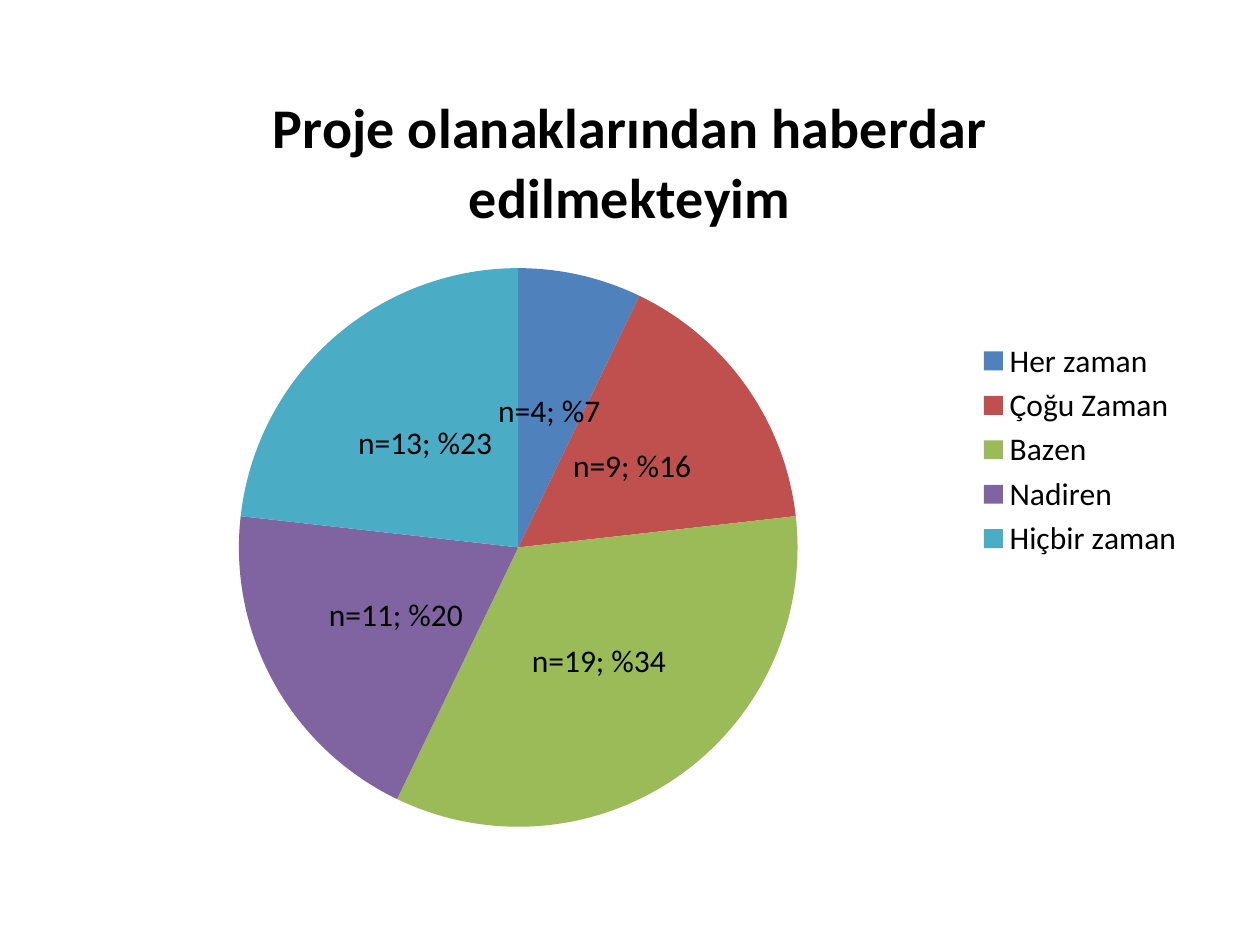
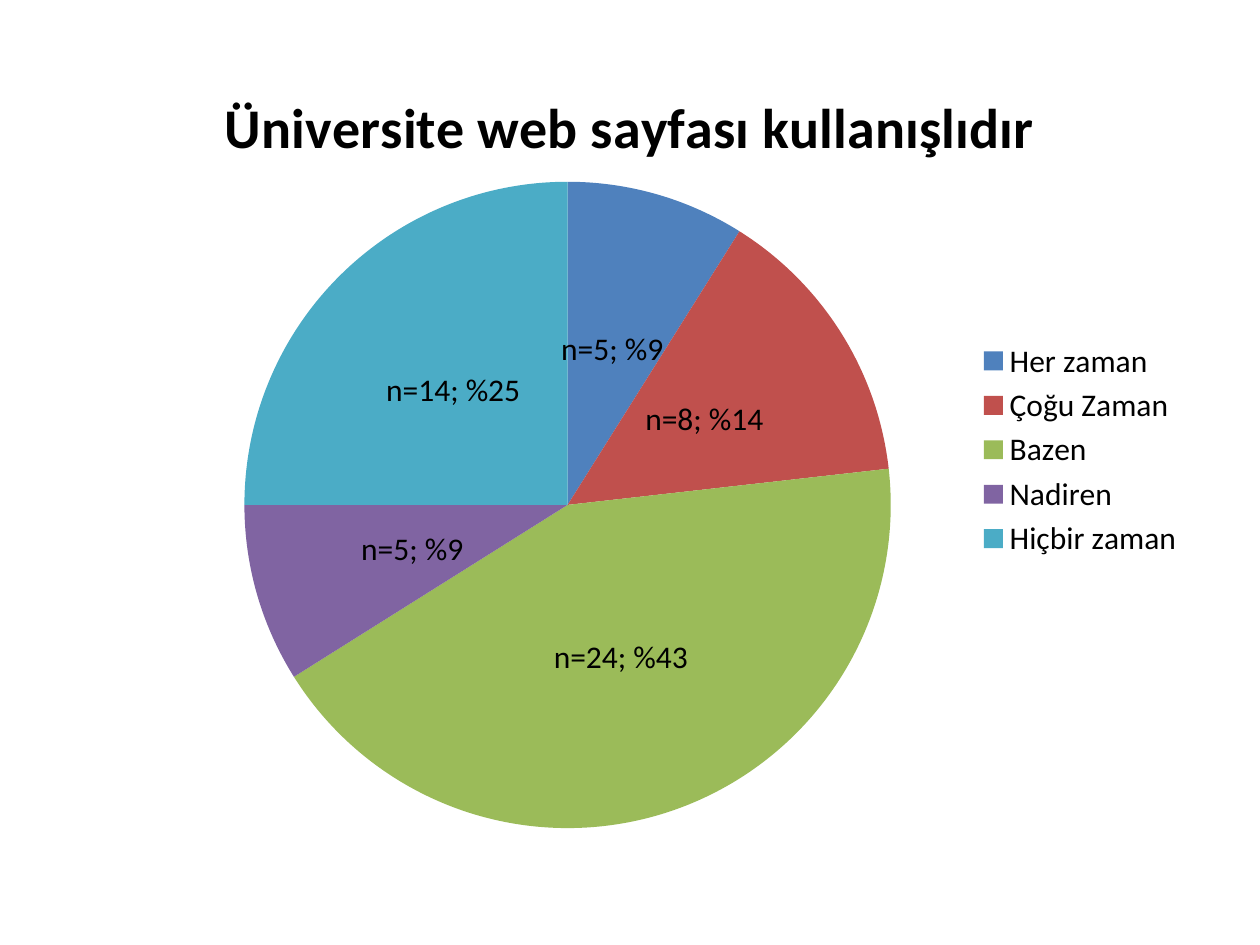
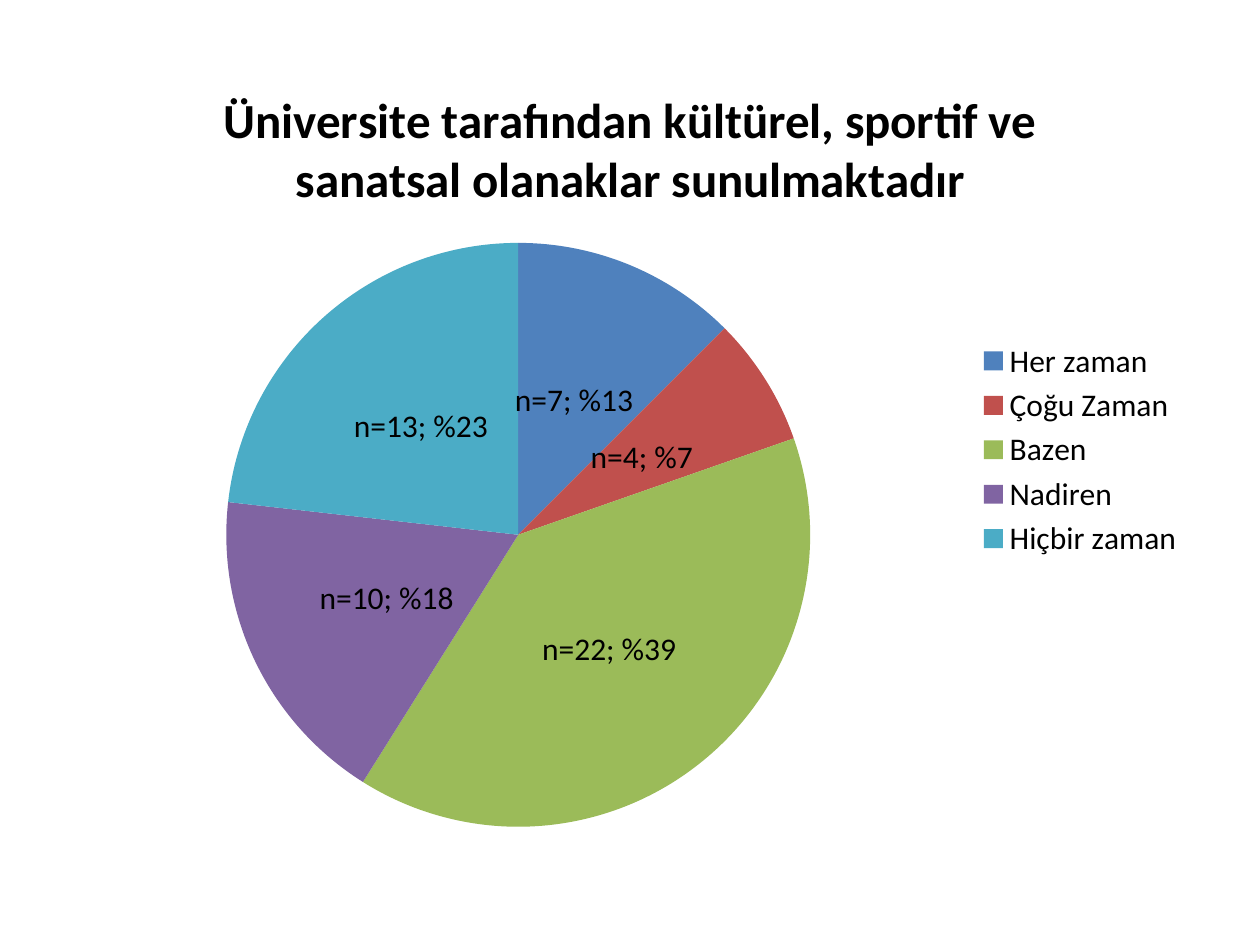
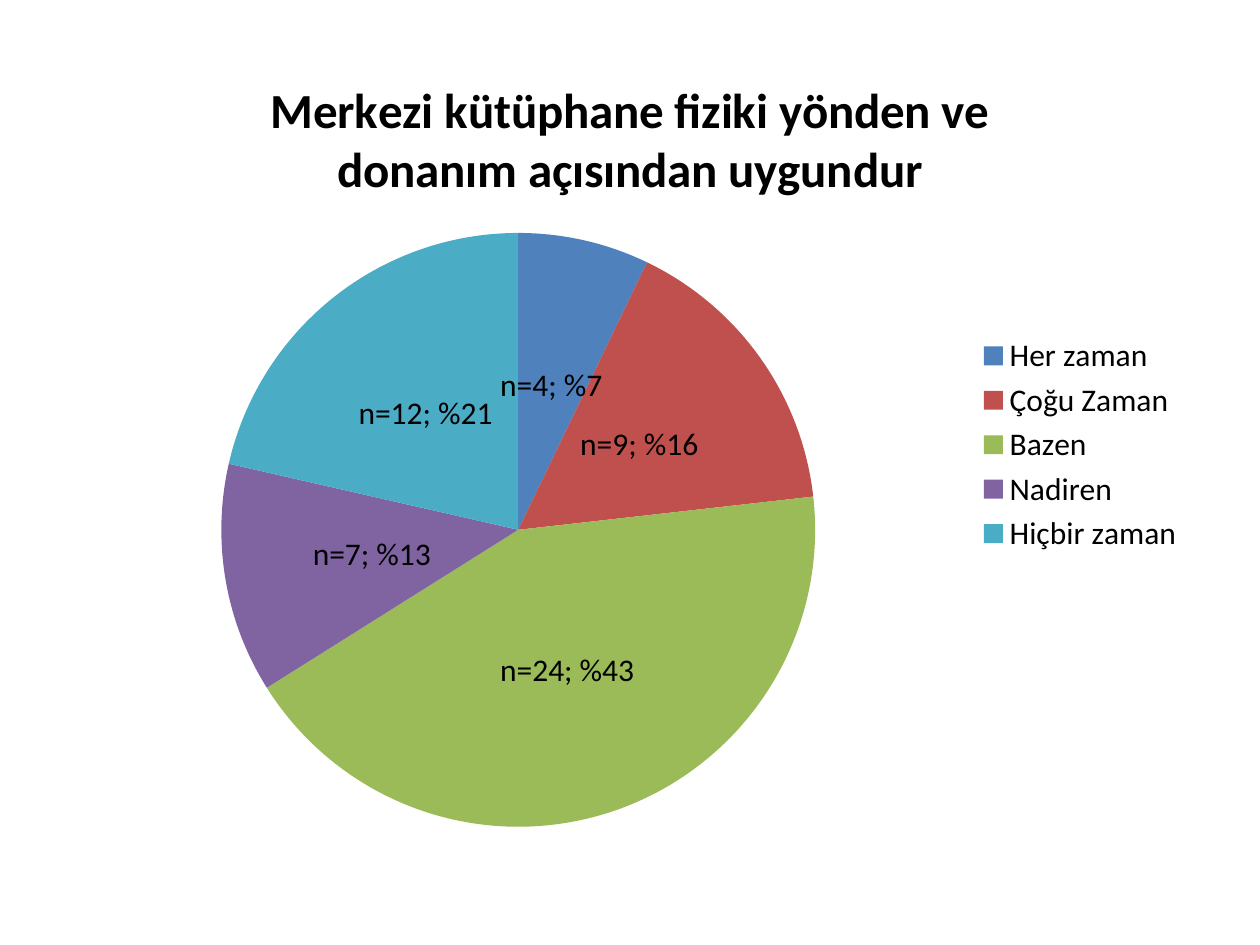
import pptx
import pptx.chart.data
import pptx.dml.color
import pptx.enum.chart
import pptx.util
from lxml import etree

# Content: survey statements and answer counts
ANSWERS = ["Her zaman", "Çoğu Zaman", "Bazen", "Nadiren", "Hiçbir zaman"]
SURVEY = [
    {"statement": "Proje olanaklarından haberdar edilmekteyim",
     "counts": [4, 9, 19, 11, 13], "title_size": 32, "top": 0.44},
    {"statement": "Üniversite web sayfası kullanışlıdır",
     "counts": [5, 8, 24, 5, 14], "title_size": 32, "top": 0.44,
     "pie_area": {"x": 0.16, "y": 0.16, "w": 0.57, "h": 0.82}},
    {"statement": "Üniversite tarafından kültürel, sportif ve sanatsal olanaklar sunulmaktadır",
     "counts": [7, 4, 22, 10, 13], "title_size": 28, "top": 0.44},
    {"statement": "Merkezi kütüphane fiziki yönden ve donanım açısından uygundur",
     "counts": [4, 9, 24, 7, 12], "title_size": 28, "top": 0.36},
]

# Shared style
FONT = "Calibri"
TEXT_COLOR = "000000"
TEXT_SIZE = 18
ANSWER_COLORS = ["4F81BD", "C0504D", "9BBB59", "8064A2", "4BACC6"]
SLIDE_WIDTH, SLIDE_HEIGHT = 10, 7.5
MARGIN = 0.5
CHART_BOTTOM = 6.7
BLANK_LAYOUT = 6


def color(hex_string):
    return pptx.dml.color.RGBColor.from_string(hex_string)


def style_font(font, size, bold=False):
    font.name = FONT
    font.size = pptx.util.Pt(size)
    font.bold = bold
    font.color.rgb = color(TEXT_COLOR)


def write_text(text_frame, text, size, bold=False):
    run = text_frame.paragraphs[0].add_run()
    run.text = text
    style_font(run.font, size, bold)


def place_pie(chart, area):
    """Fix the pie's place as fractions of the chart."""
    plot_area = chart.element.find(".//{*}plotArea")
    namespace = etree.QName(plot_area).namespace
    for old_layout in plot_area.findall("{*}layout"):
        plot_area.remove(old_layout)
    layout = etree.Element(f"{{{namespace}}}layout")
    manual = etree.SubElement(layout, f"{{{namespace}}}manualLayout")
    settings = {"layoutTarget": "inner", "xMode": "edge", "yMode": "edge", **area}
    for name, value in settings.items():
        etree.SubElement(manual, f"{{{namespace}}}{name}").set("val", str(value))
    plot_area.insert(0, layout)


def add_pie(slide, question):
    data = pptx.chart.data.CategoryChartData()
    data.categories = ANSWERS
    data.add_series(question["statement"], question["counts"])
    chart = slide.shapes.add_chart(
        pptx.enum.chart.XL_CHART_TYPE.PIE,
        pptx.util.Inches(MARGIN), pptx.util.Inches(question["top"]),
        pptx.util.Inches(SLIDE_WIDTH - 2 * MARGIN),
        pptx.util.Inches(CHART_BOTTOM - question["top"]), data).chart
    style_font(chart.font, TEXT_SIZE)

    # Title and legend
    chart.has_title = True
    chart.chart_title.include_in_layout = False
    write_text(chart.chart_title.text_frame, question["statement"],
               question["title_size"], bold=True)
    chart.has_legend = True
    chart.legend.position = pptx.enum.chart.XL_LEGEND_POSITION.RIGHT
    chart.legend.include_in_layout = False

    # Labels: count and rounded share of all answers
    center = pptx.enum.chart.XL_LABEL_POSITION.CENTER
    plot = chart.plots[0]
    plot.vary_by_categories = True
    labels = plot.series[0].data_labels
    labels.show_value = True
    labels.show_percentage = True
    labels.position = center
    total = sum(question["counts"])
    for index, (count, fill) in enumerate(zip(question["counts"], ANSWER_COLORS)):
        point = plot.series[0].points[index]
        point.format.fill.solid()
        point.format.fill.fore_color.rgb = color(fill)
        percent = int(100 * count / total + 0.5)
        write_text(point.data_label.text_frame, f"n={count}; %{percent}", TEXT_SIZE)
        point.data_label.position = center

    if "pie_area" in question:
        place_pie(chart, question["pie_area"])


def main():
    presentation = pptx.Presentation()
    presentation.slide_width = pptx.util.Inches(SLIDE_WIDTH)
    presentation.slide_height = pptx.util.Inches(SLIDE_HEIGHT)
    for question in SURVEY:
        slide = presentation.slides.add_slide(presentation.slide_layouts[BLANK_LAYOUT])
        add_pie(slide, question)
    presentation.save("out.pptx")


if __name__ == "__main__":
    main()
